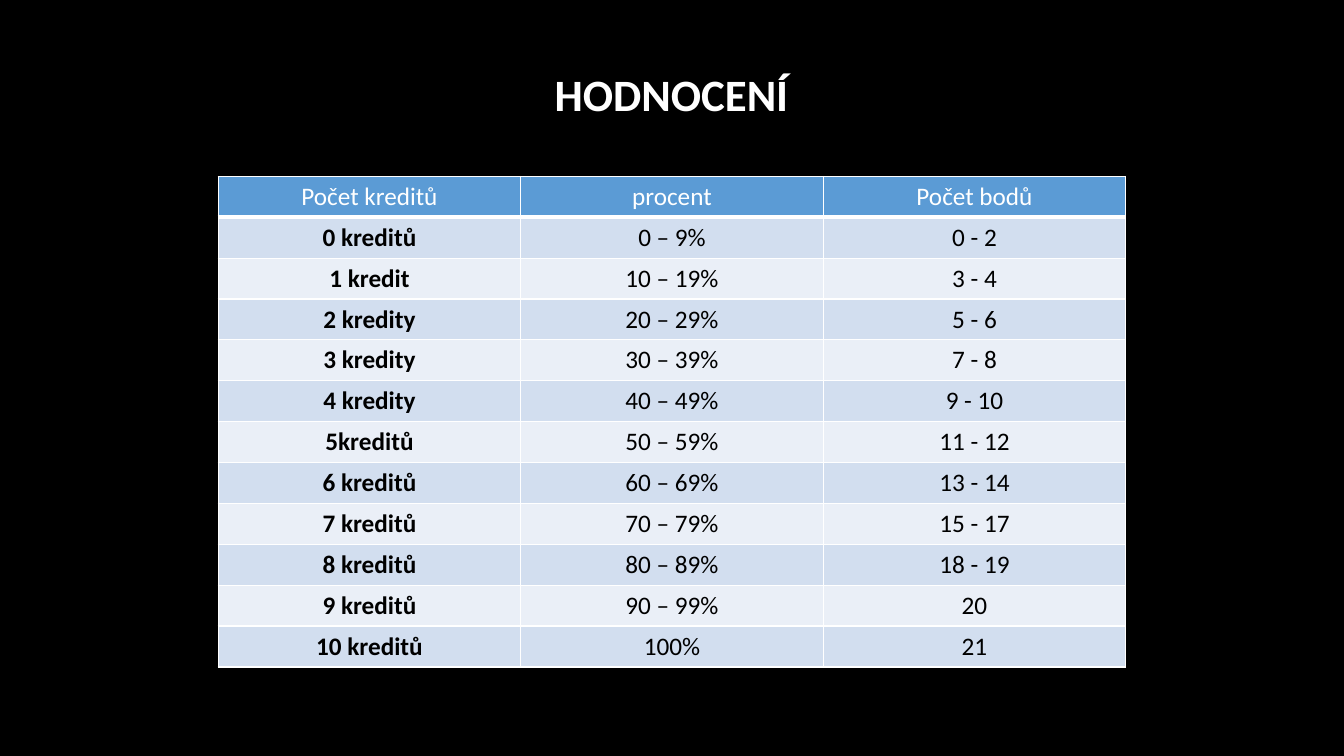
from lxml.etree import SubElement
from pptx import Presentation
from pptx.dml.color import RGBColor
from pptx.enum.text import MSO_ANCHOR, PP_ALIGN
from pptx.oxml.ns import qn
from pptx.util import Inches, Pt

TITLE = "HODNOCENÍ"
ROWS = [
    ("Počet kreditů", "procent", "Počet bodů"),
    ("0 kreditů", "0 – 9%", "0 - 2"),
    ("1 kredit", "10 – 19%", "3 - 4"),
    ("2 kredity", "20 – 29%", "5 - 6"),
    ("3 kredity", "30 – 39%", "7 - 8"),
    ("4 kredity", "40 – 49%", "9 - 10"),
    ("5kreditů", "50 – 59%", "11 - 12"),
    ("6 kreditů", "60 – 69%", "13 - 14"),
    ("7 kreditů", "70 – 79%", "15 - 17"),
    ("8 kreditů", "80 – 89%", "18 - 19"),
    ("9 kreditů", "90 – 99%", "20"),
    ("10 kreditů", "100%", "21"),
]
THEME = {
    "font": "Calibri",
    "title": Pt(32),
    "body": Pt(18),
    "back": "000000",
    "light": "FFFFFF",
    "dark": "000000",
    "head": "5B9BD5",
    "bands": ("EAEFF7", "D2DEEF"),
    "line": Pt(1),
    "rule": Pt(3),
}
WIDE, HIGH = Inches(13.33), Inches(7.5)
COL, ROW = Inches(3), Inches(4.87) // len(ROWS)


def write(frame, text, size, color, bold):
    frame.text = text
    para = frame.paragraphs[0]
    para.alignment = PP_ALIGN.CENTER
    font = para.runs[0].font
    form = {"name": THEME["font"], "size": size, "bold": bold}
    for key, value in form.items():
        setattr(font, key, value)
    font.color.rgb = RGBColor.from_string(color)


def edge(cell, side, width):
    props = cell._tc.get_or_add_tcPr()
    line = SubElement(props, qn(f"a:ln{side}"), w=str(width))
    fill = SubElement(line, qn("a:solidFill"))
    SubElement(fill, qn("a:srgbClr"), val=THEME["light"])


def add_title(slide):
    title = slide.shapes.title
    place = {"left": Inches(5.39), "top": Inches(0.61),
             "width": Inches(2.54), "height": Inches(0.64)}
    for key, value in place.items():
        setattr(title, key, value)
    frame = title.text_frame
    write(frame, TITLE, THEME["title"], THEME["light"], True)
    frame.word_wrap = False
    frame.vertical_anchor = MSO_ANCHOR.MIDDLE


def add_grid(slide):
    cols = len(ROWS[0])
    span = COL * cols
    left = (WIDE - span) // 2
    table = slide.shapes.add_table(
        len(ROWS), cols, left, Inches(1.75), span, ROW * len(ROWS)).table
    for col in table.columns:
        col.width = COL
    for r, row in enumerate(ROWS):
        table.rows[r].height = ROW
        head = r == 0
        fill = THEME["head"] if head else THEME["bands"][r % 2]
        ink = THEME["light"] if head else THEME["dark"]
        for c, text in enumerate(row):
            cell = table.cell(r, c)
            write(cell.text_frame, text, THEME["body"], ink, not head and c == 0)
            for side in "LRTB":
                thick = head and side == "B"
                edge(cell, side, THEME["rule" if thick else "line"])
            cell.fill.solid()
            cell.fill.fore_color.rgb = RGBColor.from_string(fill)


def main():
    deck = Presentation()
    deck.slide_width, deck.slide_height = WIDE, HIGH
    slide = deck.slides.add_slide(deck.slide_layouts[5])
    back = slide.background.fill
    back.solid()
    back.fore_color.rgb = RGBColor.from_string(THEME["back"])
    add_grid(slide)
    add_title(slide)
    deck.save("out.pptx")


if __name__ == "__main__":
    main()
